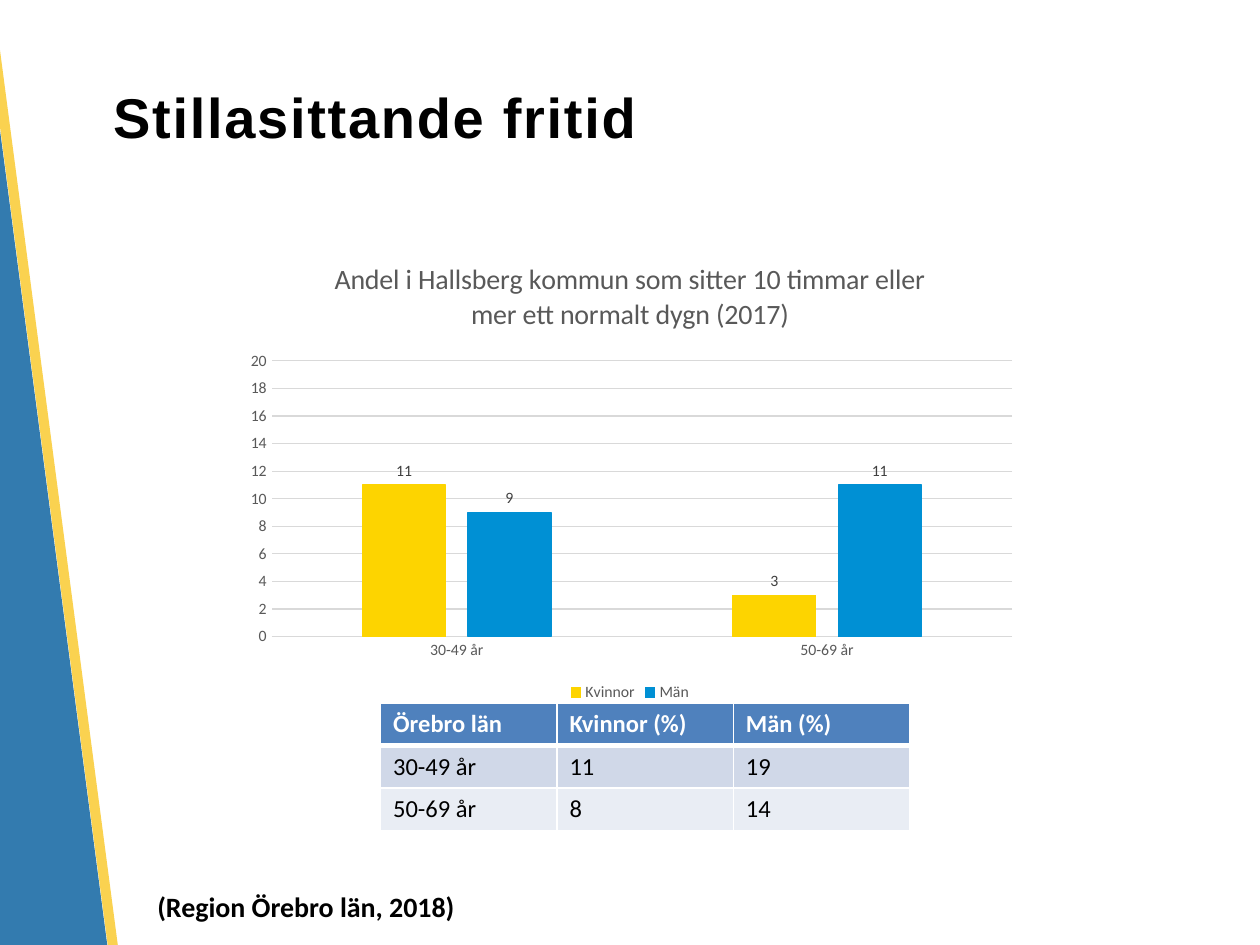
from dataclasses import dataclass
from typing import Any

from lxml.etree import SubElement
from pptx import Presentation
from pptx.chart.data import CategoryChartData
from pptx.dml.color import RGBColor
from pptx.enum.chart import XL_CHART_TYPE as ChartType
from pptx.enum.chart import XL_LABEL_POSITION as LabelPos
from pptx.enum.chart import XL_LEGEND_POSITION as LegendPos
from pptx.enum.chart import XL_TICK_MARK as Tick
from pptx.enum.shapes import MSO_SHAPE as Shape
from pptx.enum.text import MSO_ANCHOR as Anchor
from pptx.oxml.ns import qn
from pptx.util import Inches, Pt

BLACK = RGBColor(0x00, 0x00, 0x00)
WHITE = RGBColor(0xFF, 0xFF, 0xFF)
GREY = RGBColor(0x59, 0x59, 0x59)
DARK_GREY = RGBColor(0x40, 0x40, 0x40)
GRID_GREY = RGBColor(0xD9, 0xD9, 0xD9)
SIDE_BLUE = RGBColor(0x00, 0x5B, 0x9C)
SIDE_YELLOW = RGBColor(0xFA, 0xC8, 0x28)
WOMEN_YELLOW = RGBColor(0xFD, 0xD4, 0x00)
MEN_BLUE = RGBColor(0x00, 0x90, 0xD4)
HEADER_BLUE = RGBColor(0x4F, 0x81, 0xBD)
BANDS = (RGBColor(0xD0, 0xD8, 0xE8), RGBColor(0xE9, 0xED, 0xF4))
WIDTH, HEIGHT = Inches(10), Inches(7.5)


@dataclass(frozen=True)
class Box:
    """A rectangle in percent of the slide's width and height."""
    x: float
    y: float
    w: float
    h: float

    def emu(self) -> tuple[int, int, int, int]:
        """Return left, top, width and height in EMU."""
        return (int(WIDTH * self.x / 100), int(HEIGHT * self.y / 100),
                int(WIDTH * self.w / 100), int(HEIGHT * self.h / 100))


@dataclass(frozen=True)
class Stripe:
    """A tilted, see-through bar along the left edge."""
    box: Box
    color: RGBColor
    alpha: int


@dataclass(frozen=True)
class Label:
    """A line of bold text."""
    box: Box
    text: str
    size: int
    font: str
    spacing: int = 0


@dataclass(frozen=True)
class Series:
    """A named set of columns."""
    name: str
    values: tuple[int, ...]
    color: RGBColor


STRIPES = (
    Stripe(Box(-5.2, -21.87, 9.1, 151.07), SIDE_BLUE, 80),
    Stripe(Box(3.8, -23.6, 0.8, 150.93), SIDE_YELLOW, 81),
)
LABELS = (
    Label(Box(8, 4, 86.5, 16.67), "Stillasittande fritid", 32, "Arial", 100),
    Label(Box(11.5, 93.47, 27.2, 4.93), "(Region Örebro län, 2018)", 16, "Calibri"),
)
TABLE_BOX = Box(30.2, 74.4, 42, 13.47)
ROWS = (
    ("Örebro län", "Kvinnor (%)", "Män (%)"),
    ("30-49 år", "11", "19"),
    ("50-69 år", "8", "14"),
)
CHART_BOX = Box(18.4, 25.33, 63.2, 49.47)
CHART_TITLE = "Andel i Hallsberg kommun som sitter 10 timmar eller mer ett normalt dygn (2017)"
AGES = ("30-49 år", "50-69 år")
SERIES = (
    Series("Kvinnor", (11, 3), WOMEN_YELLOW),
    Series("Män", (9, 11), MEN_BLUE),
)
PLOT_AREA = {"x": 0.05, "y": 0.26, "w": 0.93, "h": 0.59}


def set_all(target: Any, **values: Any) -> None:
    """Set each named attribute on the target."""
    for name, value in values.items():
        setattr(target, name, value)


def set_font(font: Any, size: int, color: RGBColor, name: str = "Calibri",
             bold: bool = False) -> None:
    """Give a font its size, face, weight and colour."""
    set_all(font, size=Pt(size), name=name, bold=bold)
    font.color.rgb = color


def set_line(line: Any, color: RGBColor) -> None:
    """Give a line its colour and the chart's line width."""
    line.color.rgb = color
    line.width = Pt(0.75)


def add_stripe(shapes: Any, stripe: Stripe) -> None:
    """Draw one tilted stripe."""
    s = shapes.add_shape(Shape.RECTANGLE, *stripe.box.emu())
    s.rotation = 352.5
    s.shadow.inherit = False
    s.fill.solid()
    s.fill.fore_color.rgb = stripe.color
    s.line.fill.background()
    color = s._element.spPr.find(f"{qn('a:solidFill')}/{qn('a:srgbClr')}")
    SubElement(color, qn("a:alpha"), val=str(stripe.alpha * 1000))


def add_label(shapes: Any, label: Label) -> None:
    """Write one line of bold black text."""
    tf = shapes.add_textbox(*label.box.emu()).text_frame
    set_all(tf, word_wrap=True, vertical_anchor=Anchor.MIDDLE)
    r = tf.paragraphs[0].add_run()
    r.text = label.text
    set_font(r.font, label.size, BLACK, label.font, True)
    if label.spacing:
        r._r.get_or_add_rPr().set("spc", str(label.spacing))


def add_borders(cell: Any, bottom: float) -> None:
    """Give a cell white borders."""
    tc_pr = cell._tc.get_or_add_tcPr()
    for side, width in {"L": 1, "R": 1, "T": 1, "B": bottom}.items():
        ln = SubElement(tc_pr, qn(f"a:ln{side}"), w=str(Pt(width)))
        SubElement(SubElement(ln, qn("a:solidFill")), qn("a:srgbClr"), val=str(WHITE))


def add_county_table(shapes: Any) -> None:
    """Draw the table of county figures."""
    table = shapes.add_table(len(ROWS), len(ROWS[0]), *TABLE_BOX.emu()).table
    for i, row in enumerate(ROWS):
        header = i == 0
        for j, text in enumerate(row):
            cell = table.cell(i, j)
            add_borders(cell, 3 if header else 1)
            cell.fill.solid()
            cell.fill.fore_color.rgb = HEADER_BLUE if header else BANDS[i - 1]
            r = cell.text_frame.paragraphs[0].add_run()
            r.text = text
            set_font(r.font, 14, WHITE if header else BLACK, bold=header)


def place_plot(chart: Any) -> None:
    """Fix the inner plot area as shares of the chart."""
    plot_area = chart._chartSpace.chart.plotArea
    layout = plot_area.find(qn("c:layout"))
    if layout is None:
        layout = SubElement(plot_area, qn("c:layout"))
        plot_area.insert(0, layout)
    manual = SubElement(layout, qn("c:manualLayout"))
    modes = {"layoutTarget": "inner", "xMode": "edge", "yMode": "edge"}
    for name, value in {**modes, **PLOT_AREA}.items():
        SubElement(manual, qn(f"c:{name}"), val=str(value))


def add_municipal_chart(shapes: Any) -> None:
    """Draw the column chart of municipal figures."""
    data = CategoryChartData()
    data.categories = AGES
    for series in SERIES:
        data.add_series(series.name, series.values)
    chart = shapes.add_chart(ChartType.COLUMN_CLUSTERED, *CHART_BOX.emu(), data).chart
    set_font(chart.font, 10, BLACK)
    r = chart.chart_title.text_frame.paragraphs[0].add_run()
    r.text = CHART_TITLE
    set_font(r.font, 16, GREY)
    chart.has_legend = True
    set_all(chart.legend, position=LegendPos.BOTTOM, include_in_layout=False)
    set_font(chart.legend.font, 9, GREY)
    for axis in (chart.category_axis, chart.value_axis):
        set_all(axis, major_tick_mark=Tick.NONE, minor_tick_mark=Tick.NONE)
        set_font(axis.tick_labels.font, 9, GREY)
    set_line(chart.category_axis.format.line, GRID_GREY)
    set_all(chart.value_axis, minimum_scale=0, maximum_scale=20, major_unit=2)
    chart.value_axis.format.line.fill.background()
    set_line(chart.value_axis.major_gridlines.format.line, GRID_GREY)
    plot = chart.plots[0]
    set_all(plot, gap_width=219, overlap=-27, vary_by_categories=False)
    for series, columns in zip(SERIES, plot.series):
        columns.format.fill.solid()
        columns.format.fill.fore_color.rgb = series.color
        set_line(columns.format.line, series.color)
        labels = columns.data_labels
        set_all(labels, show_value=True, position=LabelPos.OUTSIDE_END)
        set_font(labels.font, 9, DARK_GREY)
    place_plot(chart)


def main() -> None:
    """Build and save the slide."""
    prs = Presentation()
    set_all(prs, slide_width=WIDTH, slide_height=HEIGHT)
    shapes = prs.slides.add_slide(prs.slide_layouts[6]).shapes
    for stripe in STRIPES:
        add_stripe(shapes, stripe)
    for label in LABELS:
        add_label(shapes, label)
    add_county_table(shapes)
    add_municipal_chart(shapes)
    prs.save("out.pptx")


if __name__ == "__main__":
    main()
